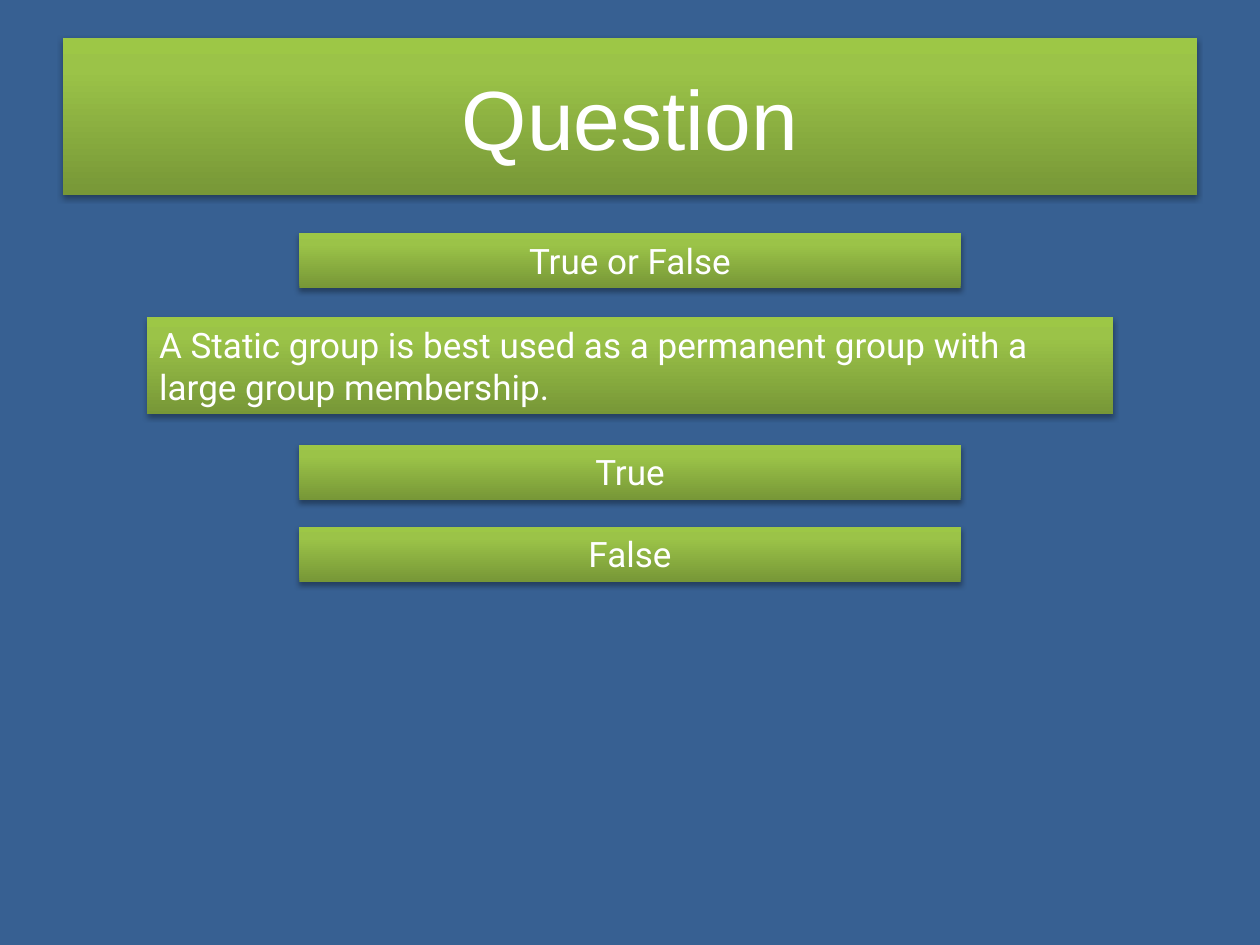
from lxml.etree import SubElement
from pptx import Presentation
from pptx.dml.color import RGBColor as RGB
from pptx.enum.shapes import MSO_SHAPE as Shape
from pptx.enum.text import MSO_ANCHOR as Anchor, MSO_AUTO_SIZE as AutoSize, PP_ALIGN as Align
from pptx.oxml.ns import qn
from pptx.util import Inches, Pt

COLORS = {"back": "376092", "dark": "779737", "mid": "9BC348",
          "light": "9DC746", "text": "FFFFFF", "shadow": "000000"}
STOPS = [(0, "dark"), (80, "mid"), (100, "light")]
COLS, ROWS = 100, 75


class QuizSlide:
    def __init__(self, prs):
        self.col = prs.slide_width / COLS
        self.row = prs.slide_height / ROWS
        self.s = prs.slides.add_slide(prs.slide_layouts[5])
        fill = self.s.background.fill
        fill.solid()
        fill.fore_color.rgb = RGB.from_string(COLORS["back"])

    def centred(self, top, width, height):
        """Turn grid units into a horizontally centred frame."""
        return [round(v) for v in ((COLS - width) / 2 * self.col, top * self.row,
                                   width * self.col, height * self.row)]

    def paint(self, sp):
        """Give a shape the green gradient and a soft shadow below it."""
        sp.fill.gradient()
        sp.fill.gradient_angle = 90
        stops = sp.element.spPr.find(".//" + qn("a:gsLst"))
        stops.clear()
        for pos, name in STOPS:
            gs = SubElement(stops, qn("a:gs"), pos=str(pos * 1000))
            SubElement(gs, qn("a:srgbClr"), val=COLORS[name])
        sp.line.fill.background()
        sp.shadow.inherit = False
        effects = sp.element.spPr.find(qn("a:effectLst"))
        shadow = SubElement(effects, qn("a:outerShdw"), blurRad=str(Pt(3.1)),
                            dist=str(Pt(1.8)), dir="5400000", rotWithShape="0")
        color = SubElement(shadow, qn("a:srgbClr"), val=COLORS["shadow"])
        SubElement(color, qn("a:alpha"), val="35000")

    def set_text(self, sp, text, font, size, align, anchor):
        tf = sp.text_frame
        tf.text = text
        tf.word_wrap = True
        tf.vertical_anchor = anchor
        p = tf.paragraphs[0]
        p.alignment = align
        r = p.runs[0]
        r.font.name, r.font.size = font, Pt(size)
        r.font.color.rgb = RGB.from_string(COLORS["text"])

    def title(self, text, top, width, height):
        sp = self.s.shapes.title
        sp.left, sp.top, sp.width, sp.height = self.centred(top, width, height)
        self.paint(sp)
        self.set_text(sp, text, "Arial", 48, Align.CENTER, Anchor.MIDDLE)

    def box(self, text, top, width=52.5, height=4.4, align=Align.CENTER):
        sp = self.s.shapes.add_shape(Shape.RECTANGLE, *self.centred(top, width, height))
        self.paint(sp)
        self.set_text(sp, text, "Roboto", 20, align, Anchor.TOP)
        sp.text_frame.auto_size = AutoSize.SHAPE_TO_FIT_TEXT


def main():
    prs = Presentation()
    prs.slide_width, prs.slide_height = Inches(10), Inches(7.5)
    quiz = QuizSlide(prs)
    quiz.title("Question", 3, 90, 12.5)
    quiz.box("A Static group is best used as a permanent group with a large group membership.",
             25.2, 76.7, 7.7, Align.LEFT)
    for text, top in [("True", 35.3), ("False", 41.8), ("True or False", 18.5)]:
        quiz.box(text, top)
    prs.save("out.pptx")


if __name__ == "__main__":
    main()
